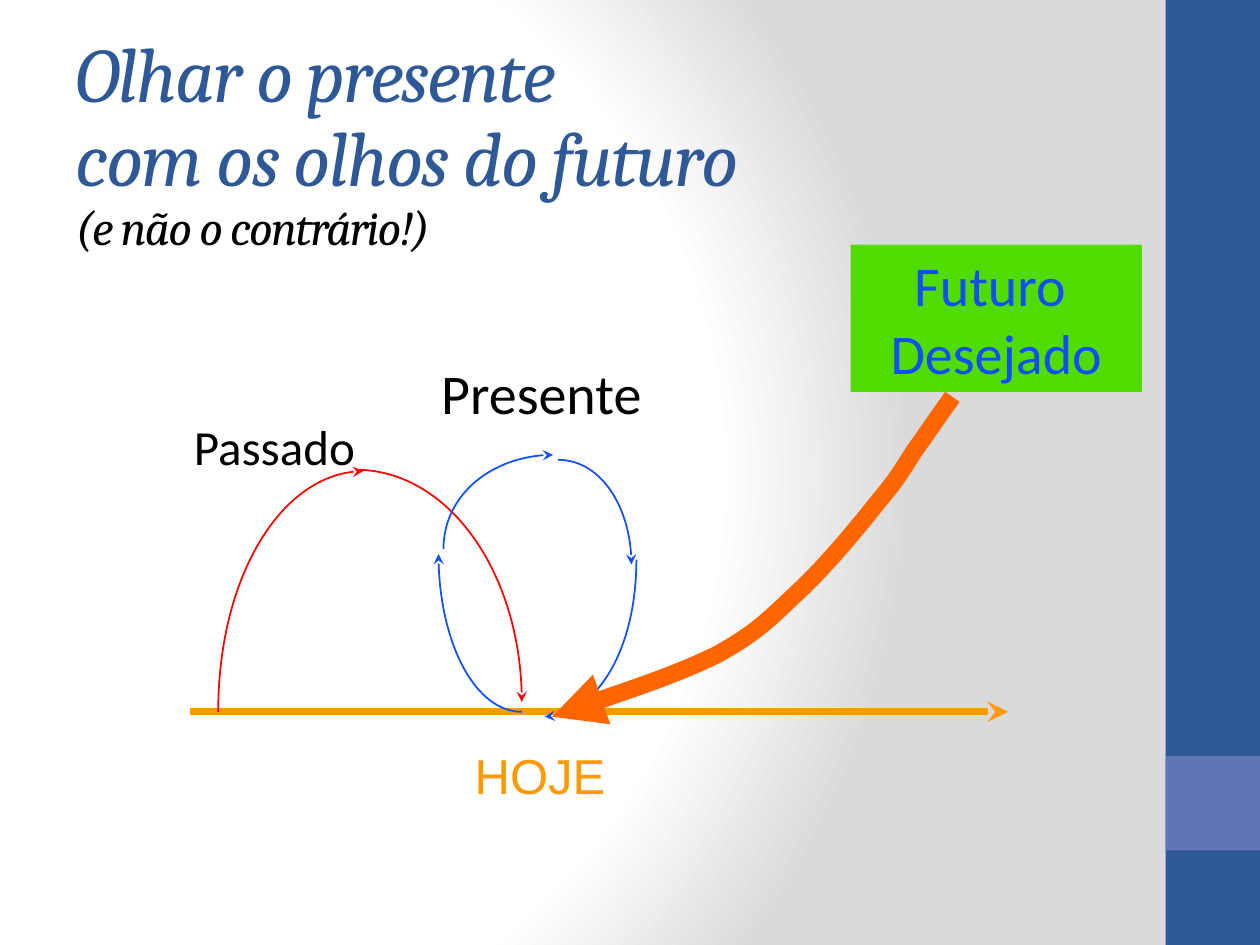
from lxml import etree
from pptx import Presentation
from pptx.dml.color import RGBColor
from pptx.enum.shapes import MSO_CONNECTOR, MSO_SHAPE
from pptx.enum.text import MSO_ANCHOR, MSO_AUTO_SIZE, PP_ALIGN
from pptx.oxml import parse_xml
from pptx.oxml.ns import qn
from pptx.util import Cm, Pt

RECTANGLE = MSO_SHAPE.RECTANGLE
STRAIGHT = MSO_CONNECTOR.STRAIGHT
MIDDLE = MSO_ANCHOR.MIDDLE
GROW = MSO_AUTO_SIZE.SHAPE_TO_FIT_TEXT
NO_FIT = MSO_AUTO_SIZE.NONE
LEFT, CENTER = PP_ALIGN.LEFT, PP_ALIGN.CENTER
TITLE_ONLY = 5
ROUNDNESS = 0.55

COLORS = {
    "navy": "2F5897", "periwinkle": "6076B4", "green": "51DC00",
    "blue": "114FFB", "red": "FF0000", "amber": "FF9900",
    "orange": "FF6600", "black": "000000", "white": "FFFFFF", "gray": "DADADA",
}

ARCS = [
    ("red", (3.51, 2.36), (6.86, 7.04), True),
    ("red", (0.74, 7.24), (3.66, 2.39), False),
    ("blue", (6.86, 7.24), (5.18, 4.06), True),
    ("blue", (5.28, 3.96), (7.49, 2.06), False),
    ("blue", (7.59, 2.16), (9.07, 4.27), True),
    ("blue", (9.17, 4.17), (7.32, 7.34), False),
]

FUTURE_PATH = [
    (7.47, 7.34), (8.69, 6.91), (9.93, 6.5), (10.77, 6.1),
    (11.58, 5.66), (11.86, 5.36), (12.42, 4.83),
    (12.98, 4.32), (13.69, 3.45), (14.07, 2.97),
    (14.48, 2.49), (14.58, 2.26), (14.81, 1.93),
    (15.06, 1.57), (15.42, 1.06), (15.54, 0.89),
]


def rgb(color):
    return RGBColor.from_string(COLORS[color])


def format_run(run, size, font, color):
    run.font.size = Pt(size)
    run.font.name = font
    run.font.color.rgb = rgb(color)


def format_line(shape, color, width, end, arrow):
    shape.line.color.rgb = rgb(color)
    shape.line.width = Pt(width)
    line = shape.line._get_or_add_ln()
    etree.SubElement(line, qn(f"a:{end}"), type=arrow)


def add_rectangle(slide, box, color):
    shape = slide.shapes.add_shape(RECTANGLE, *map(Cm, box))
    shape.shadow.inherit = False
    shape.fill.solid()
    shape.fill.fore_color.rgb = rgb(color)
    shape.line.fill.background()
    return shape


def add_label(slide, box, text, size, font, color, alignment=LEFT, wrap=False):
    label = slide.shapes.add_textbox(*map(Cm, box))
    frame = label.text_frame
    frame.text = text
    frame.word_wrap = wrap
    frame.auto_size = GROW
    paragraph = frame.paragraphs[0]
    paragraph.alignment = alignment
    format_run(paragraph.runs[0], size, font, color)


def add_curve(slide, origin, points, color, width, end, arrow):
    left, top = origin
    start, *controls = [(Cm(left + x), Cm(top + y)) for x, y in points]
    builder = slide.shapes.build_freeform(*start)
    builder.add_line_segments(controls, close=False)
    shape = builder.convert_to_shape()
    segments = list(shape._element.iter(qn("a:lnTo")))
    for index in range(0, len(segments), 3):
        first, *others = segments[index:index + 3]
        first.tag = qn("a:cubicBezTo")
        for other in others:
            first.append(other[0])
            other.getparent().remove(other)
    shape.shadow.inherit = False
    shape.fill.background()
    format_line(shape, color, width, end, arrow)


def quarter_arc(start, finish, horizontal_first):
    (x1, y1), (x2, y2) = start, finish
    corner = (x2, y1) if horizontal_first else (x1, y2)

    def toward_corner(point):
        return tuple(a + (b - a) * ROUNDNESS for a, b in zip(point, corner))

    return [start, toward_corner(start), toward_corner(finish), finish]


def set_background(slide):
    slide.background.fill.solid()
    properties = slide.background._cSld.bg.bgPr
    stops = "".join(
        f'<a:gs pos="{position * 1000}"><a:srgbClr val="{COLORS[color]}"/></a:gs>'
        for position, color in [(0, "white"), (75, "white"), (100, "gray")]
    )
    gradient = parse_xml(
        '<a:gradFill xmlns:a="http://schemas.openxmlformats.org/drawingml/2006/main">'
        f'<a:gsLst>{stops}</a:gsLst><a:path path="circle">'
        '<a:fillToRect l="20000" t="50000" r="100000" b="50000"/></a:path></a:gradFill>'
    )
    properties.replace(properties[0], gradient)


def add_sidebar(slide, box):
    left, top, width, height = box
    add_rectangle(slide, box, "navy")
    add_rectangle(slide, (left, top + height * 0.8, width, height * 0.1), "periwinkle")


def add_title(slide, box):
    title = slide.shapes.title
    title.left, title.top, title.width, title.height = map(Cm, box)
    frame = title.text_frame
    frame.vertical_anchor = MIDDLE
    frame.word_wrap = True
    frame.auto_size = NO_FIT
    frame.text = "Olhar o presente \vcom os olhos do futuro\v(e não o contrário!)"
    paragraph = frame.paragraphs[0]
    paragraph.alignment = LEFT
    paragraph.line_spacing = 0.9
    styles = [(44, "navy"), (44, "navy"), (28, "black")]
    for run, (size, color) in zip(paragraph.runs, styles):
        format_run(run, size, "Cambria", color)
        run.font.italic = True
        run.font._element.set("spc", "-100")


def add_future_box(slide, box):
    frame = add_rectangle(slide, box, "green").text_frame
    frame.text = "Futuro \nDesejado"
    frame.word_wrap = True
    frame.auto_size = GROW
    for paragraph in frame.paragraphs:
        paragraph.alignment = CENTER
        format_run(paragraph.runs[0], 32, "Calibri", "blue")


def add_timeline(slide, box):
    left, top, width, height = box
    add_label(slide, (left, top + 1.17, 3.91, 1.45), "Passado", 28, "Calibri", "black")
    axis = slide.shapes.add_connector(
        STRAIGHT, Cm(left + 0.18), Cm(top + 7.24), Cm(left + width), Cm(top + 7.24))
    format_line(axis, "amber", 4, "tailEnd", "stealth")
    etree.SubElement(axis._element.spPr, qn("a:effectLst"))
    add_label(slide, (left + 4.45, top, 5.61, 1.6),
              "Presente", 32, "Calibri", "black", CENTER, True)
    for color, start, finish, horizontal_first in ARCS:
        points = quarter_arc(start, finish, horizontal_first)
        add_curve(slide, (left, top), points, color, 1, "tailEnd", "stealth")
    add_label(slide, (left + 5.66, top + height - 1.45, 3.2, 1.45),
              "HOJE", 28, "Arial", "amber")
    add_curve(slide, (left, top), FUTURE_PATH, "orange", 10, "headEnd", "triangle")


def main():
    presentation = Presentation()
    presentation.slide_width = Cm(25.4)
    presentation.slide_height = Cm(19.05)
    slide = presentation.slides.add_slide(presentation.slide_layouts[TITLE_ONLY])
    set_background(slide)
    add_sidebar(slide, (23.5, 0, 1.9, 19.05))
    add_title(slide, (1.27, 0.76, 21.16, 4.37))
    add_future_box(slide, (17.15, 4.93, 5.87, 2.97))
    add_timeline(slide, (3.66, 7.11, 16.66, 9.25))
    presentation.save("out.pptx")


if __name__ == "__main__":
    main()
